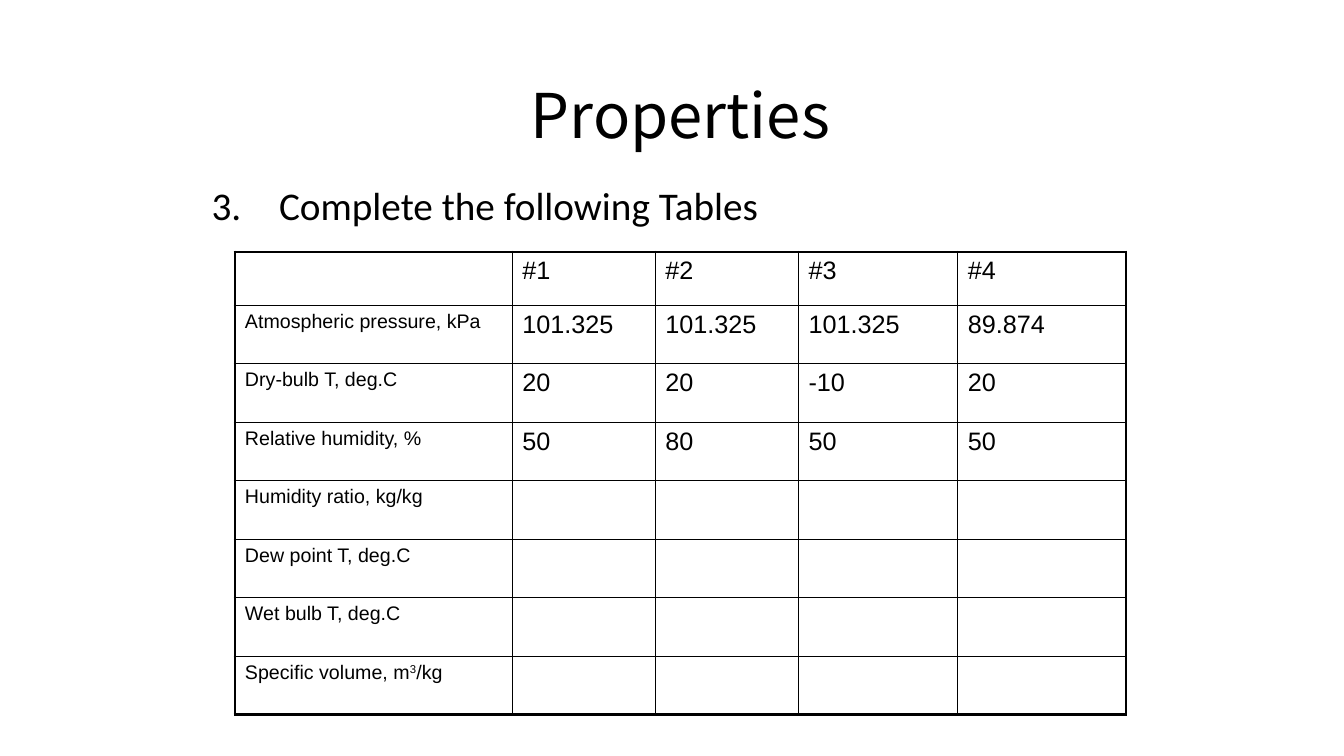
from lxml import etree
from pptx import Presentation
from pptx import util as u
from pptx.dml.color import RGBColor
from pptx.enum import text
from pptx.oxml.ns import qn

COLORS = {"ink": "000000"}
COLUMNS = [2.75, 1.42, 1.42, 1.58, 1.67]
HEADER_HEIGHT, ROW_HEIGHT = 0.53, 0.58
THIN, THICK = 1, 2.25
ROWS = [
    ["", "#1", "#2", "#3", "#4"],
    ["Atmospheric pressure, kPa", "101.325", "101.325", "101.325", "89.874"],
    ["Dry-bulb T, deg.C", "20", "20", "-10", "20"],
    ["Relative humidity, %", "50", "80", "50", "50"],
    ["Humidity ratio, kg/kg"],
    ["Dew point T, deg.C"],
    ["Wet bulb T, deg.C"],
    [["Specific volume, m", ("3", 30), "/kg"]],
]


class Deck:
    def __init__(self, prs):
        self.colors = COLORS
        self.s = prs.slides.add_slide(prs.slide_layouts[6])

    def run(self, p, content, font, size, raised=0):
        r = p.add_run()
        r.text = content
        r.font.name = font
        r.font.size = u.Pt(size)
        r.font.color.rgb = RGBColor.from_string(self.colors["ink"])
        if raised:
            r.font._element.set("baseline", str(raised * 1000))

    def text(self, box, content, font, size, align=text.PP_ALIGN.LEFT,
             anchor=text.MSO_ANCHOR.TOP, number=None, indent=0.67):
        sp = self.s.shapes.add_textbox(*map(u.Inches, box))
        tf = sp.text_frame
        tf.word_wrap = True
        tf.vertical_anchor = anchor
        p = tf.paragraphs[0]
        p.alignment = align
        if number:
            pPr = p._p.get_or_add_pPr()
            pPr.set("marL", str(u.Inches(indent)))
            pPr.set("indent", str(-u.Inches(indent)))
            etree.SubElement(pPr, qn("a:buFont"), typeface=font)
            etree.SubElement(pPr, qn("a:buAutoNum"),
                             type="arabicPeriod", startAt=str(number))
        self.run(p, content, font, size)

    def borders(self, cell, widths):
        tcPr = cell._tc.get_or_add_tcPr()
        for side, width in zip("LRTB", widths):
            ln = etree.SubElement(tcPr, qn(f"a:ln{side}"), w=str(u.Pt(width)))
            fill = etree.SubElement(ln, qn("a:solidFill"))
            etree.SubElement(fill, qn("a:srgbClr"), val=self.colors["ink"])

    def table(self, left, top, rows, columns, heights, font):
        frame = self.s.shapes.add_table(
            len(rows), len(columns), u.Inches(left), u.Inches(top),
            u.Inches(sum(columns)), u.Inches(sum(heights)))
        tbl = frame.table
        tbl.first_row = tbl.horz_banding = False
        for column, width in zip(tbl.columns, columns):
            column.width = u.Inches(width)
        for i, (values, height) in enumerate(zip(rows, heights)):
            tbl.rows[i].height = u.Inches(height)
            for j in range(len(columns)):
                cell = tbl.cell(i, j)
                edges = (j == 0, j == len(columns) - 1, i == 0, i == len(rows) - 1)
                self.borders(cell, [THICK if edge else THIN for edge in edges])
                cell.fill.background()
                value = values[j] if j < len(values) else ""
                parts = value if isinstance(value, list) else [value]
                for part in filter(None, parts):
                    content, raised = part if isinstance(part, tuple) else (part, 0)
                    self.run(cell.text_frame.paragraphs[0], content, font,
                             18 if j else 14, raised)


def main():
    prs = Presentation()
    prs.slide_width, prs.slide_height = u.Inches(13.33), u.Inches(7.5)
    deck = Deck(prs)
    deck.text((2.5, 0.5, 8.5, 1.25), "Properties", "Noto Sans CJK SC", 44,
              align=text.PP_ALIGN.CENTER, anchor=text.MSO_ANCHOR.MIDDLE)
    deck.text((2, 1.75, 9.08, 0.83), "Complete the following Tables",
              "Calibri", 28, number=3)
    heights = [HEADER_HEIGHT] + [ROW_HEIGHT] * (len(ROWS) - 1)
    deck.table(2.33, 2.5, ROWS, COLUMNS, heights, "Arial")
    prs.save("out.pptx")


if __name__ == "__main__":
    main()
